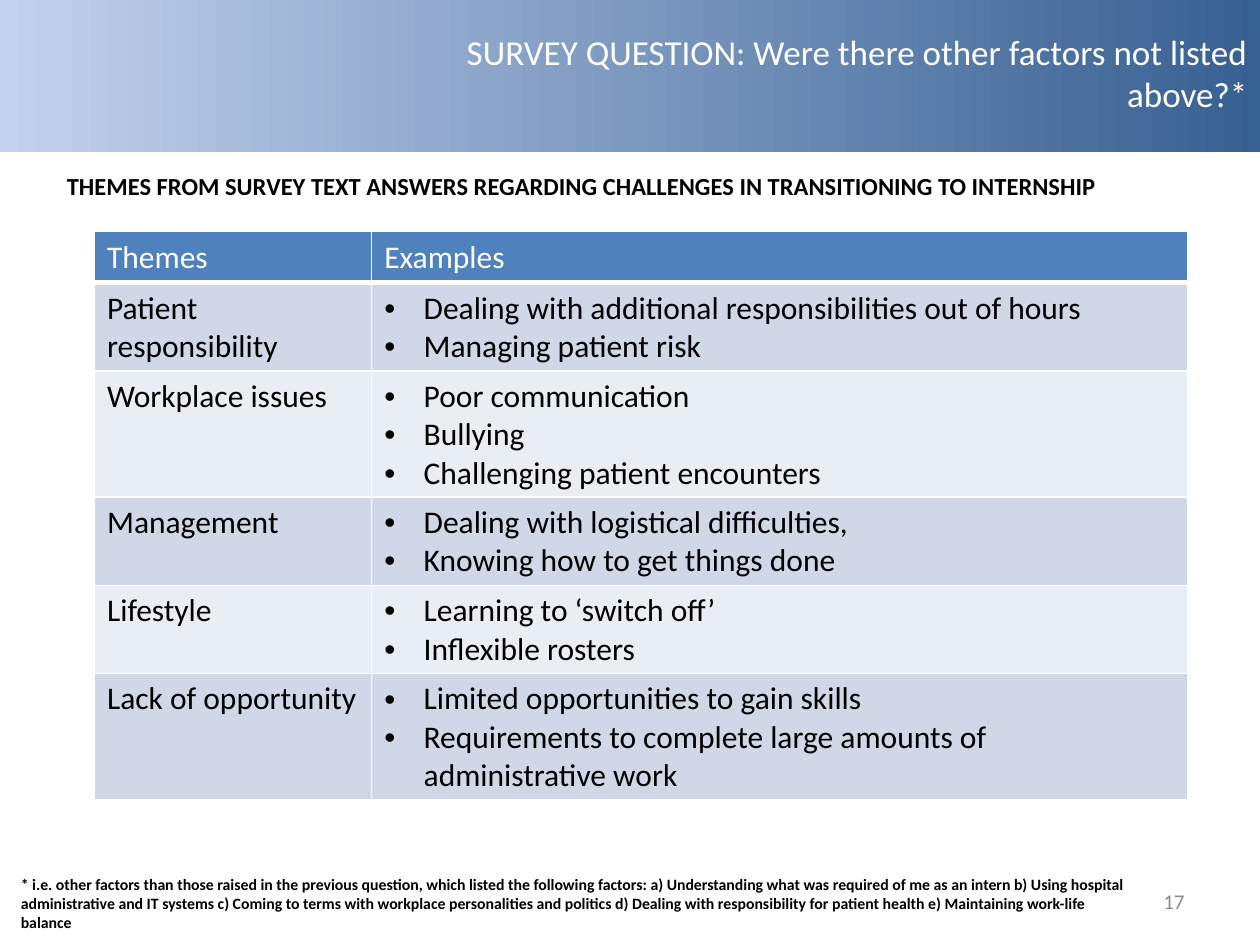
import copy
import dataclasses

import lxml.etree
import pptx
import pptx.dml.color
import pptx.enum.dml
import pptx.enum.shapes
import pptx.enum.text
import pptx.oxml.ns
import pptx.util

Pt = pptx.util.Pt
Align = pptx.enum.text.PP_ALIGN
Anchor = pptx.enum.text.MSO_ANCHOR
AutoSize = pptx.enum.text.MSO_AUTO_SIZE


@dataclasses.dataclass(frozen=True)
class Theme:
    """Colours, type sizes and font of the slide."""
    font: str = "Calibri"
    white: str = "FFFFFF"
    black: str = "000000"
    grey: str = "8C8C8C"
    banner_stops: tuple = ((0, "376092"), (1, "C2D1ED"), (1, "E1E8F5"))
    header: str = "4F81BD"
    bands: tuple = ("D0D8E8", "E9EDF4")
    title_size: float = 20
    table_size: float = 18
    heading_size: float = 14
    number_size: float = 12
    footnote_size: float = 9


@dataclasses.dataclass(frozen=True)
class Box:
    """A rectangle in points."""
    left: float
    top: float
    width: float
    height: float

    def lengths(self):
        """Return the four lengths as slide units."""
        return [Pt(value) for value in dataclasses.astuple(self)]


THEME = Theme()
TITLE = "SURVEY QUESTION: Were there other factors not listed above?*"
HEADING = "THEMES FROM SURVEY TEXT ANSWERS REGARDING CHALLENGES IN TRANSITIONING TO INTERNSHIP"
FOOTNOTE = (
    "* i.e. other factors than those raised in the previous question, which listed the "
    "following factors: a) Understanding what was required of me as an intern b) Using "
    "hospital administrative and IT systems c) Coming to terms with workplace personalities "
    "and politics d) Dealing with responsibility for patient health e) Maintaining "
    "work-life balance"
)
COLUMN_TITLES = ("Themes", "Examples")
SURVEY_THEMES = {
    "Patient responsibility": ["Dealing with additional responsibilities out of hours",
                               "Managing patient risk"],
    "Workplace issues": ["Poor communication", "Bullying", "Challenging patient encounters"],
    "Management": ["Dealing with logistical difficulties,", "Knowing how to get things done"],
    "Lifestyle": ["Learning to ‘switch off’", "Inflexible rosters"],
    "Lack of opportunity": ["Limited opportunities to gain skills",
                            "Requirements to complete large amounts of administrative work"],
}


def rgb(value):
    """Return a colour from its hex value."""
    return pptx.dml.color.RGBColor.from_string(value)


def apply_format(target, values):
    """Set each attribute named in the dict."""
    for name, value in values.items():
        setattr(target, name, value)


def write_lines(text_frame, lines, size, color, bold=False, align=Align.LEFT, bullets=False):
    """Write one formatted paragraph for each line."""
    for index, line in enumerate(lines):
        paragraph = text_frame.paragraphs[0] if index == 0 else text_frame.add_paragraph()
        paragraph.alignment = align
        if bullets:
            add_bullet(paragraph)
        run = paragraph.add_run()
        run.text = line
        apply_format(run.font, {"name": THEME.font, "size": Pt(size), "bold": bold})
        run.font.color.rgb = rgb(color)


def add_bullet(paragraph, indent=22.5):
    """Give a paragraph a hanging round bullet."""
    properties = paragraph._p.get_or_add_pPr()
    properties.set("marL", str(Pt(indent)))
    properties.set("indent", str(-Pt(indent)))
    for tag, name, value in (("a:buFont", "typeface", "Arial"), ("a:buChar", "char", "•")):
        lxml.etree.SubElement(properties, pptx.oxml.ns.qn(tag)).set(name, value)


def add_borders(cell, widths):
    """Draw white left, right, top and bottom borders on a cell."""
    properties = cell._tc.get_or_add_tcPr()
    for index, (side, width) in enumerate(zip("LRTB", widths)):
        line = lxml.etree.Element(pptx.oxml.ns.qn(f"a:ln{side}"), w=str(Pt(width)))
        fill = lxml.etree.SubElement(line, pptx.oxml.ns.qn("a:solidFill"))
        lxml.etree.SubElement(fill, pptx.oxml.ns.qn("a:srgbClr")).set("val", THEME.white)
        properties.insert(index, line)


def add_banner(slide, box):
    """Place the gradient band with the slide title on it."""
    banner = slide.shapes.add_shape(pptx.enum.shapes.MSO_SHAPE.RECTANGLE, *box.lengths())
    banner.shadow.inherit = False
    banner.line.fill.background()
    banner.fill.gradient()
    banner.fill.gradient_angle = 180
    last_stop = banner.element.findall(".//" + pptx.oxml.ns.qn("a:gs"))[-1]
    last_stop.addnext(copy.deepcopy(last_stop))
    for stop, (position, color) in zip(banner.fill.gradient_stops, THEME.banner_stops):
        stop.position = position
        stop.color.rgb = rgb(color)
    title = slide.shapes.title
    title.element.addprevious(banner.element)
    title_box = Box(box.left + 229.7, box.top, box.width - 229.7, box.height - 4.3)
    apply_format(title, dict(zip(("left", "top", "width", "height"), title_box.lengths())))
    apply_format(title.text_frame, {"word_wrap": True, "auto_size": AutoSize.NONE,
                                    "vertical_anchor": Anchor.MIDDLE})
    write_lines(title.text_frame, [TITLE], THEME.title_size, THEME.white, align=Align.RIGHT)


def add_text(slide, box, text, size, color, wrap=True, anchor=Anchor.TOP, **formats):
    """Place a text box with one paragraph."""
    text_frame = slide.shapes.add_textbox(*box.lengths()).text_frame
    apply_format(text_frame, {"word_wrap": wrap, "vertical_anchor": anchor})
    write_lines(text_frame, [text], size, color, **formats)


def add_theme_table(slide, box, first_column=158.4, row_height=29.2):
    """Place the table of themes and their examples."""
    rows = [([COLUMN_TITLES[0]], [COLUMN_TITLES[1]])]
    rows += [([theme], examples) for theme, examples in SURVEY_THEMES.items()]
    frame = slide.shapes.add_table(len(rows), len(COLUMN_TITLES), *box.lengths())
    table = frame.table
    for column, width in zip(table.columns, (first_column, box.width - first_column)):
        column.width = Pt(width)
    for row_index, row in enumerate(rows):
        is_header = row_index == 0
        table.rows[row_index].height = Pt(row_height)
        fill = THEME.header if is_header else THEME.bands[(row_index - 1) % 2]
        color = THEME.white if is_header else THEME.black
        widths = (1, 1, 3 if row_index == 1 else 1, 3 if is_header else 1)
        for column_index, lines in enumerate(row):
            cell = table.cell(row_index, column_index)
            cell.fill.solid()
            cell.fill.fore_color.rgb = rgb(fill)
            add_borders(cell, widths)
            write_lines(cell.text_frame, lines, THEME.table_size, color,
                        bullets=column_index == 1 and not is_header)
    frame.height = Pt(box.height)


def main():
    """Build the slide and save it."""
    presentation = pptx.Presentation()
    apply_format(presentation, {"slide_width": Pt(720), "slide_height": Pt(540)})
    slide = presentation.slides.add_slide(presentation.slide_layouts.get_by_name("Title Only"))
    add_banner(slide, Box(0, 0, 720, 87.1))
    add_text(slide, Box(31.1, 94.3, 631.4, 24.5), HEADING, THEME.heading_size, THEME.black,
             wrap=False, bold=True)
    add_text(slide, Box(516.2, 500.4, 167.8, 28.8), "17", THEME.number_size, THEME.grey,
             anchor=Anchor.MIDDLE, align=Align.RIGHT)
    add_theme_table(slide, Box(54, 132.4, 625, 324.7))
    add_text(slide, Box(4.8, 496.4, 644.4, 40.3), FOOTNOTE, THEME.footnote_size, THEME.black,
             bold=True)
    presentation.save("out.pptx")


if __name__ == "__main__":
    main()
